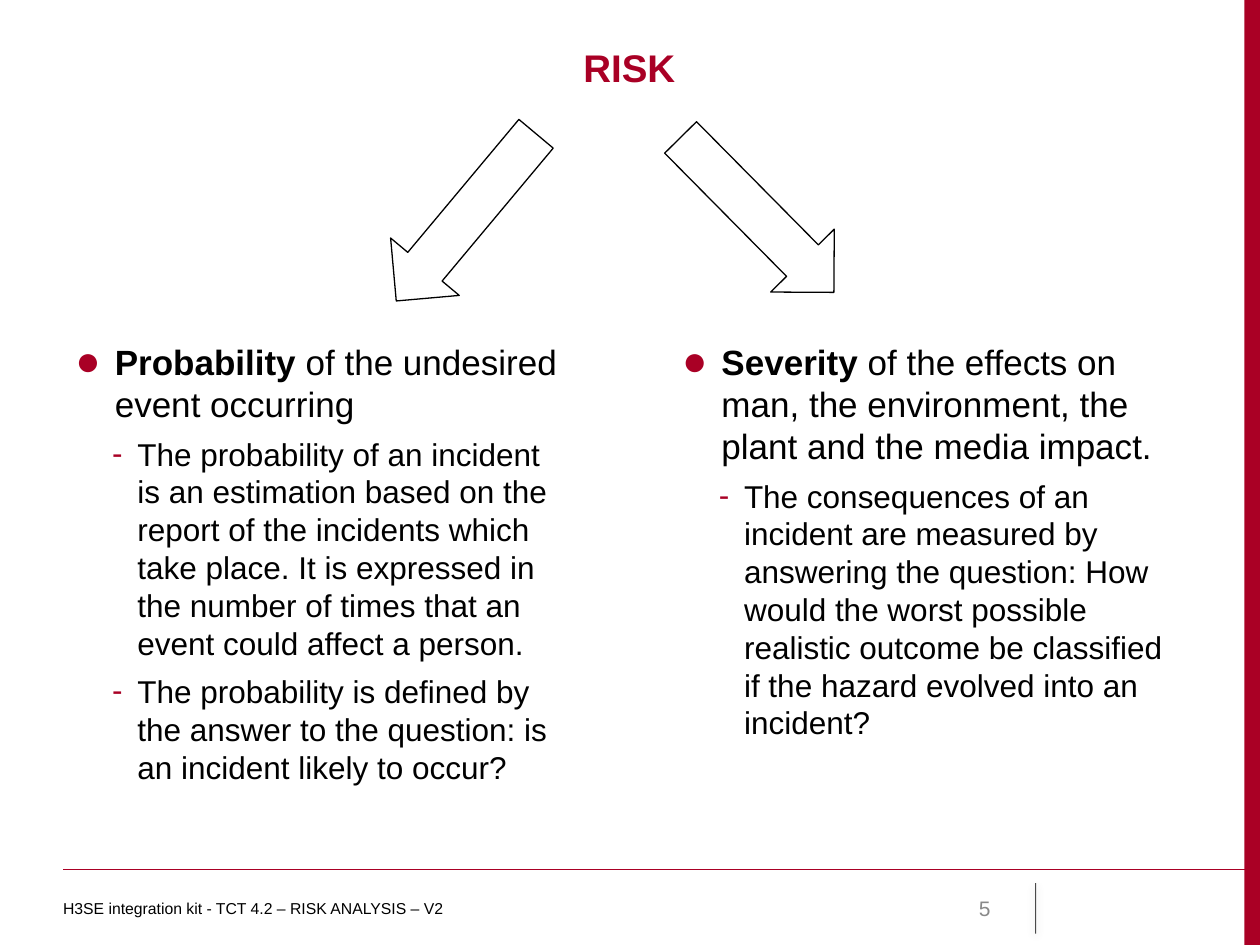
"""Build the RISK slide, which splits risk into probability and severity."""
from dataclasses import dataclass

import lxml.etree
import pptx
import pptx.dml.color
import pptx.enum.dml
import pptx.enum.shapes
import pptx.enum.text
import pptx.oxml.ns
import pptx.util

COLUMNS, ROWS = 100, 75
CELL = pptx.util.Inches(0.1)
RED, BLACK, GREY = "AA0025", "000000", "898989"
TEXT_RED = "A90025"
FONT = "Arial"
ALIGN = pptx.enum.text.PP_ALIGN
ANCHOR = pptx.enum.text.MSO_ANCHOR
SHAPE = pptx.enum.shapes.MSO_SHAPE


@dataclass(frozen=True)
class Area:
    column: float
    row: float
    columns: float
    rows: float

    def box(self) -> tuple[int, ...]:
        """Return left, top, width and height as lengths."""
        return tuple(cells(n) for n in (self.column, self.row, self.columns, self.rows))


@dataclass(frozen=True)
class Level:
    size: float
    margin: float
    hanging: float
    bullet: str
    bullet_percent: int


@dataclass(frozen=True)
class Topic:
    column: float
    term: str
    definition: str
    details: tuple[str, ...]


@dataclass(frozen=True)
class Label:
    area: Area
    text: str
    size: float
    color: str
    align: ALIGN = ALIGN.LEFT
    anchor: ANCHOR = ANCHOR.MIDDLE
    bold: bool = False
    inset: float = 1


@dataclass(frozen=True)
class Arrow:
    area: Area
    rotation: float


LEVELS = (Level(20, 3.13, 3.13, "●", 120), Level(18, 4.92, 2, "-", 100))
TOPICS = (
    Topic(5, "Probability", " of the undesired event occurring", (
        "The probability of an incident is an estimation based on the report of the "
        "incidents which take place. It is expressed in the number of times that an "
        "event could affect a person.",
        "The probability is defined by the answer to the question: is an incident "
        "likely to occur?",
    )),
    Topic(53.15, "Severity",
          " of the effects on man, the environment, the plant and the media impact.", (
        "The consequences of an incident are measured by answering the question: How "
        "would the worst possible realistic outcome be classified if the hazard "
        "evolved into an incident?",
    )),
)
LABELS = (
    Label(Area(5, 3, 89.9, 6.9), "RISK", 22, TEXT_RED, ALIGN.CENTER, ANCHOR.TOP, True),
    Label(Area(71.7, 70.1, 7.9, 4), "5", 12, GREY, ALIGN.RIGHT),
    Label(Area(5, 70.1, 60.8, 4), "H3SE integration kit - TCT 4.2 – RISK ANALYSIS – V2",
          9, BLACK, inset=0),
)
ARROWS = (
    Arrow(Area(28.35, 13.7, 17.3, 7.1), 309.9),
    Arrow(Area(51.45, 13.5, 17.3, 7.1), 225.3),
)


def cells(count: float) -> int:
    """Turn a number of grid cells into a length."""
    return int(count * CELL)


def rgb(color: str) -> pptx.dml.color.RGBColor:
    """Turn a hex string into a colour."""
    return pptx.dml.color.RGBColor.from_string(color)


def add_element(parent, tag: str, **attributes):
    """Append a drawing element with its attributes."""
    values = {name: str(value) for name, value in attributes.items()}
    return lxml.etree.SubElement(parent, pptx.oxml.ns.qn(tag), values)


def set_font(paragraph, size: float, color: str) -> None:
    """Set the font that all runs of a paragraph share."""
    paragraph.font.name = FONT
    paragraph.font.size = pptx.util.Pt(size)
    paragraph.font.color.rgb = rgb(color)


def add_text_frame(slide, area: Area):
    """Add a wrapping text box and return its frame."""
    frame = slide.shapes.add_textbox(*area.box()).text_frame
    frame.word_wrap = True
    return frame


def add_label(slide, label: Label) -> None:
    """Add a single line of text."""
    frame = add_text_frame(slide, label.area)
    frame.vertical_anchor = label.anchor
    frame.margin_left = cells(label.inset)
    paragraph = frame.paragraphs[0]
    paragraph.text = label.text
    paragraph.alignment = label.align
    set_font(paragraph, label.size, label.color)
    paragraph.font.bold = label.bold


def format_bullet(paragraph, depth: int) -> None:
    """Give a paragraph the bullet, indent and font of its level."""
    level = LEVELS[depth]
    paragraph.level = depth
    properties = paragraph._p.get_or_add_pPr()
    properties.set("marL", str(cells(level.margin)))
    properties.set("indent", str(-cells(level.hanging)))
    color = add_element(properties, "a:buClr")
    add_element(color, "a:srgbClr", val=TEXT_RED)
    add_element(properties, "a:buSzPct", val=level.bullet_percent * 1000)
    add_element(properties, "a:buFont", typeface=FONT)
    add_element(properties, "a:buChar", char=level.bullet)
    paragraph.space_after = pptx.util.Pt(3)
    set_font(paragraph, level.size, BLACK)


def add_topic(slide, topic: Topic) -> None:
    """Add a defined term with its details below."""
    frame = add_text_frame(slide, Area(topic.column, 26.5, 40.3, 39.4))
    heading = frame.paragraphs[0]
    format_bullet(heading, 0)
    for text, bold in ((topic.term, True), (topic.definition, False)):
        run = heading.add_run()
        run.text = text
        run.font.bold = bold
    for detail in topic.details:
        paragraph = frame.add_paragraph()
        paragraph.text = detail
        format_bullet(paragraph, 1)
        paragraph.space_before = pptx.util.Pt(3)


def add_arrow(slide, arrow: Arrow) -> None:
    """Add an outlined block arrow."""
    shape = slide.shapes.add_shape(SHAPE.LEFT_ARROW, *arrow.area.box())
    shape.rotation = arrow.rotation
    shape.shadow.inherit = False
    shape.fill.background()
    shape.line.color.rgb = rgb(BLACK)
    shape.line.width = pptx.util.Pt(0.75)


def add_rule(slide, start: tuple, end: tuple, color: str, width: float):
    """Add a straight unthemed line and return it with its empty effect list."""
    points = [cells(n) for n in (*start, *end)]
    rule = slide.shapes.add_connector(pptx.enum.shapes.MSO_CONNECTOR.STRAIGHT, *points)
    rule._element.remove(rule._element.find(pptx.oxml.ns.qn("p:style")))
    rule.line.color.rgb = rgb(color)
    rule.line.width = pptx.util.Pt(width)
    rule.line.dash_style = pptx.enum.dml.MSO_LINE.SOLID
    return rule, add_element(rule._element.spPr, "a:effectLst")


def add_frame(slide) -> None:
    """Add the side band, the footer rule and the page divider."""
    band = slide.shapes.add_shape(SHAPE.RECTANGLE, *Area(98.76, 0, 1.24, ROWS).box())
    band.shadow.inherit = False
    band.fill.solid()
    band.fill.fore_color.rgb = rgb(RED)
    band.line.fill.background()
    add_rule(slide, (5, 69), (COLUMNS, 69), RED, 0.75)
    divider, effects = add_rule(slide, (82.2, 70.1), (82.2, 74.1), BLACK, 0.5)
    line_color = divider._element.spPr.find(".//" + pptx.oxml.ns.qn("a:srgbClr"))
    add_element(line_color, "a:alpha", val=70000)
    shadow = add_element(effects, "a:outerShdw", blurRad=pptx.util.Pt(5),
                         dist=pptx.util.Pt(1.6), dir=5400000, rotWithShape=0)
    shadow_color = add_element(shadow, "a:srgbClr", val=BLACK)
    add_element(shadow_color, "a:alpha", val=38000)


def main() -> None:
    """Build and save the presentation."""
    presentation = pptx.Presentation()
    presentation.slide_width = cells(COLUMNS)
    presentation.slide_height = cells(ROWS)
    slide = presentation.slides.add_slide(presentation.slide_layouts[6])
    add_frame(slide)
    for draw, items in ((add_label, LABELS), (add_topic, TOPICS), (add_arrow, ARROWS)):
        for item in items:
            draw(slide, item)
    presentation.save("out.pptx")


if __name__ == "__main__":
    main()
